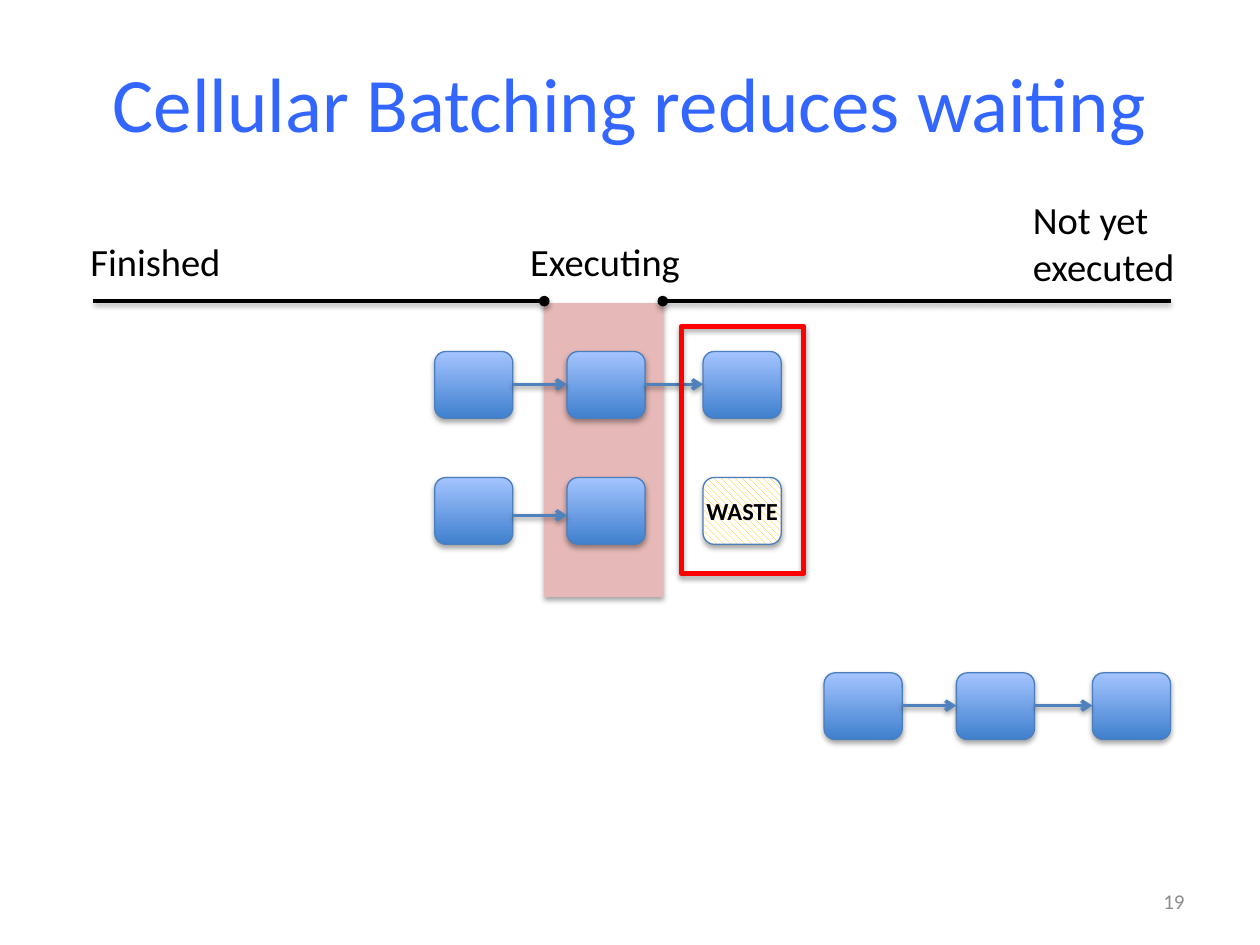
from lxml import etree
from pptx import Presentation
from pptx.dml.color import RGBColor
from pptx.enum import dml, shapes, text
from pptx.oxml import ns
from pptx.util import Inches, Pt

BLACK = RGBColor(0x00, 0x00, 0x00)
WHITE = RGBColor(0xFF, 0xFF, 0xFF)
TITLE_BLUE = RGBColor(0x33, 0x66, 0xFF)
CELL_DARK = RGBColor(0x3F, 0x80, 0xCE)
CELL_LIGHT = RGBColor(0xA4, 0xC4, 0xFF)
CELL_EDGE = RGBColor(0x4B, 0x7E, 0xBC)
ARROW_BLUE = RGBColor(0x4F, 0x81, 0xBD)
BAND_PINK = RGBColor(0xE6, 0xB9, 0xB8)
FRAME_RED = RGBColor(0xFF, 0x00, 0x00)
HATCH_GOLD = RGBColor(0xFF, 0xC0, 0x00)
NUMBER_GRAY = RGBColor(0x8C, 0x8C, 0x8C)

FONT = "Calibri"
CELL_WIDTH, CELL_HEIGHT = 0.62, 0.53
COLUMNS = (3.45, 4.5, 5.58)
FIRST_ROW, SECOND_ROW, WAITING_ROW = 2.79, 3.79, 5.34
WAITING_SHIFT = 3.09
TIMELINE_Y = 2.39
BAND_LEFT, BAND_WIDTH = 4.32, 0.94


def add_shadow(item, distance, opacity):
    properties = item._element.spPr
    effects = etree.SubElement(properties, ns.qn("a:effectLst"))
    shadow = etree.SubElement(effects, ns.qn("a:outerShdw"), blurRad=str(Pt(3.1)),
                              dist=str(Pt(distance)), dir="5400000", rotWithShape="0")
    color = etree.SubElement(shadow, ns.qn("a:srgbClr"), val=str(BLACK))
    etree.SubElement(color, ns.qn("a:alpha"), val=str(opacity * 1000))


def add_block(parent, kind, left, top, width, height, edge, weight=0.75):
    block = parent.shapes.add_shape(kind, Inches(left), Inches(top),
                                    Inches(width), Inches(height))
    block.line.color.rgb = edge
    block.line.width = Pt(weight)
    block.fill.background()
    add_shadow(block, 1.8, 35)
    return block


def add_cell(parent, left, top):
    return add_block(parent, shapes.MSO_SHAPE.ROUNDED_RECTANGLE, left, top,
                     CELL_WIDTH, CELL_HEIGHT, CELL_EDGE)


def add_line(parent, start, end, y, color, **ends):
    line = parent.shapes.add_connector(shapes.MSO_CONNECTOR.STRAIGHT, Inches(start),
                                       Inches(y), Inches(end), Inches(y))
    line.line.color.rgb = color
    line.line.width = Pt(2)
    outline = line._element.spPr.find(ns.qn("a:ln"))
    for name, style in ends.items():
        etree.SubElement(outline, ns.qn(f"a:{name}"), type=style)
    add_shadow(line, 1.6, 38)


def add_chain(page, lefts, top, arrow_drop=0.26):
    chain = page.shapes.add_group_shape()
    for left in lefts:
        cell = add_cell(chain, left, top)
        cell.fill.gradient()
        cell.fill.gradient_angle = 90
        for stop, color in zip(cell.fill.gradient_stops, (CELL_DARK, CELL_LIGHT)):
            stop.color.rgb = color
    for left, following in zip(lefts, lefts[1:]):
        add_line(chain, left + CELL_WIDTH, following, top + arrow_drop,
                 ARROW_BLUE, tailEnd="arrow")


def write(frame, wording, size, color, align=None, bold=False):
    frame.text = wording
    for paragraph in frame.paragraphs:
        paragraph.alignment = align
        for span in paragraph.runs:
            span.font.name = FONT
            span.font.size = Pt(size)
            span.font.bold = bold
            span.font.color.rgb = color


def add_label(page, wording, left, top, width, height):
    box = page.shapes.add_textbox(Inches(left), Inches(top), Inches(width), Inches(height))
    box.text_frame.word_wrap = False
    box.text_frame.auto_size = text.MSO_AUTO_SIZE.SHAPE_TO_FIT_TEXT
    write(box.text_frame, wording, 22, BLACK)


def add_title(page, wording):
    title = page.shapes.title
    title.left, title.top = Inches(0.5), Inches(0.18)
    title.width, title.height = Inches(9), Inches(1.25)
    title.text_frame.vertical_anchor = text.MSO_ANCHOR.MIDDLE
    write(title.text_frame, wording, 44, TITLE_BLUE, text.PP_ALIGN.CENTER)


def add_page_number(page, number):
    box = page.shapes.add_textbox(Inches(7.17), Inches(6.95), Inches(2.33), Inches(0.4))
    box.text_frame.word_wrap = True
    box.text_frame.vertical_anchor = text.MSO_ANCHOR.MIDDLE
    write(box.text_frame, number, 12, NUMBER_GRAY, text.PP_ALIGN.RIGHT)


def add_waste_cell(page):
    cell = add_cell(page, COLUMNS[2], SECOND_ROW)
    cell.fill.patterned()
    cell.fill.pattern = dml.MSO_PATTERN.WIDE_DOWNWARD_DIAGONAL
    cell.fill.fore_color.rgb = HATCH_GOLD
    cell.fill.back_color.rgb = WHITE
    frame = cell.text_frame
    frame.margin_left = frame.margin_right = frame.margin_top = frame.margin_bottom = 0
    frame.word_wrap = False
    frame.vertical_anchor = text.MSO_ANCHOR.MIDDLE
    write(frame, "WASTE", 14, BLACK, text.PP_ALIGN.CENTER, bold=True)


def add_executing_band(page):
    band = add_block(page, shapes.MSO_SHAPE.RECTANGLE, BAND_LEFT, 2.41,
                     BAND_WIDTH, 2.32, BAND_PINK)
    band.fill.solid()
    band.fill.fore_color.rgb = BAND_PINK


def main():
    deck = Presentation()
    deck.slide_width, deck.slide_height = Inches(10), Inches(7.5)
    page = deck.slides.add_slide(deck.slide_layouts.get_by_name("Title Only"))

    add_title(page, "Cellular Batching reduces waiting")
    add_waste_cell(page)
    add_chain(page, [left + WAITING_SHIFT for left in COLUMNS], WAITING_ROW)
    add_executing_band(page)
    add_line(page, BAND_LEFT + BAND_WIDTH, 9.29, TIMELINE_Y, BLACK, headEnd="oval")
    add_line(page, 0.74, BAND_LEFT, TIMELINE_Y, BLACK, tailEnd="oval")
    add_page_number(page, "19")
    add_chain(page, COLUMNS, FIRST_ROW)
    add_chain(page, COLUMNS[:2], SECOND_ROW, arrow_drop=0.3)
    add_block(page, shapes.MSO_SHAPE.RECTANGLE, 5.41, 2.59, 0.97, 1.96, FRAME_RED, 3)
    add_label(page, "Finished", 0.62, 1.84, 1.24, 0.47)
    add_label(page, "Not yet\nexecuted", 8.1, 1.51, 1.34, 0.84)
    add_label(page, "Executing", 4.11, 1.84, 1.4, 0.47)

    deck.save("out.pptx")


if __name__ == "__main__":
    main()
